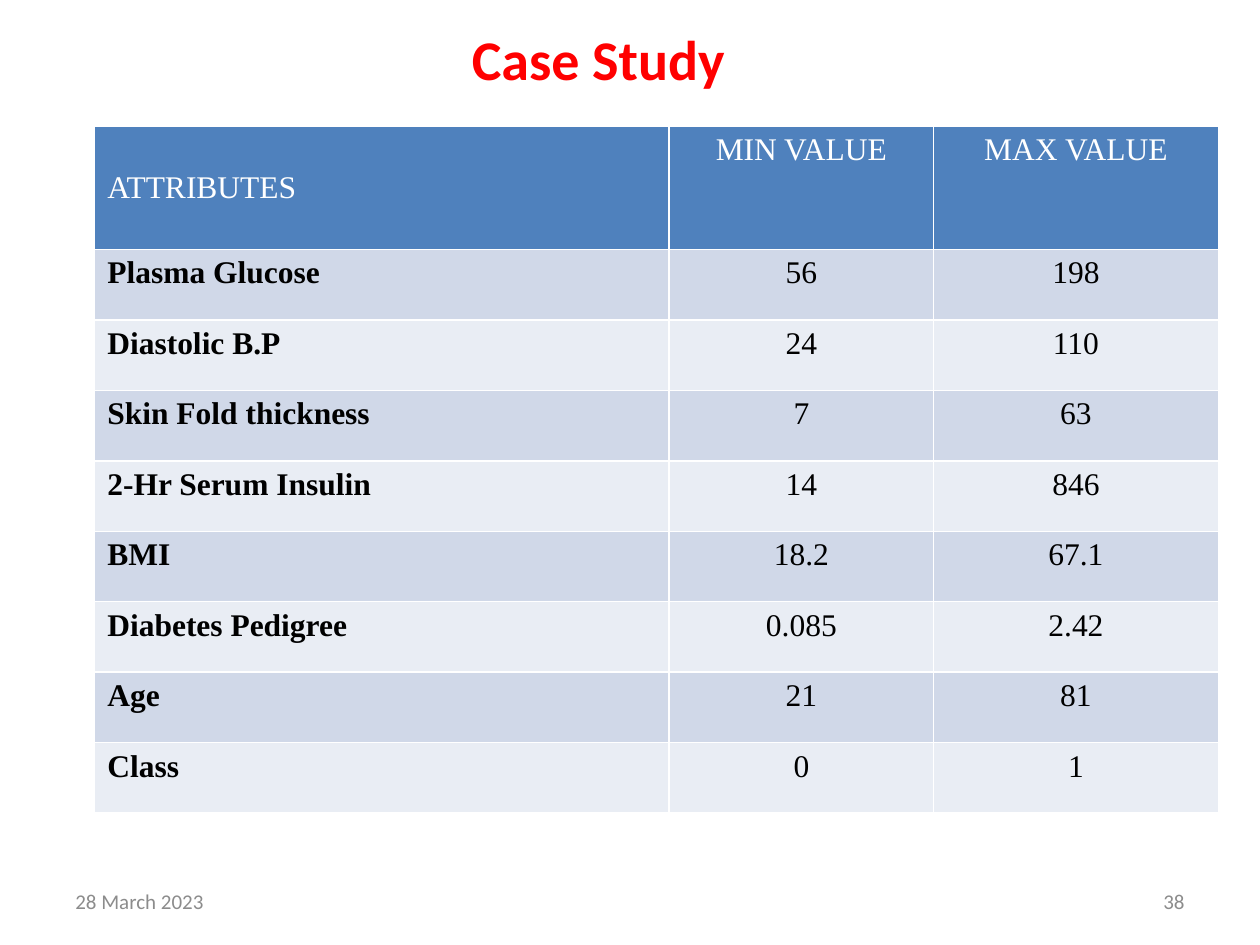
from pptx import Presentation
from pptx.dml.color import RGBColor
from pptx.enum.text import MSO_ANCHOR, PP_ALIGN
from pptx.util import Cm, Pt

LEFT, CENTER, RIGHT = PP_ALIGN.LEFT, PP_ALIGN.CENTER, PP_ALIGN.RIGHT
TOP, MIDDLE = MSO_ANCHOR.TOP, MSO_ANCHOR.MIDDLE

HEADER_FILL = "4F81BD"
BAND_FILLS = ["D0D8E8", "E9EDF4"]
ROWS = [
    ("ATTRIBUTES", "MIN VALUE", "MAX VALUE"),
    ("Plasma Glucose", "56", "198"),
    ("Diastolic B.P", "24", "110"),
    ("Skin Fold thickness", "7", "63"),
    ("2-Hr Serum Insulin", "14", "846"),
    ("BMI", "18.2", "67.1"),
    ("Diabetes Pedigree", "0.085", "2.42"),
    ("Age", "21", "81"),
    ("Class", "0", "1"),
]
COLUMN_WIDTHS = [11.58, 5.33, 5.74]
ROW_HEIGHTS = [2.49] + [1.42] * (len(ROWS) - 1)


def rgb(value):
    return RGBColor.from_string(value)


def write(frame, text, size=18, font="Times New Roman", color="000000", bold=False, align=LEFT):
    para = frame.paragraphs[0]
    para.alignment = align
    span = para.add_run()
    span.text = text
    span.font.size = Pt(size)
    span.font.name = font
    span.font.bold = bold
    span.font.color.rgb = rgb(color)


deck = Presentation()
deck.slide_width, deck.slide_height = Cm(25.4), Cm(19.05)
page = deck.slides.add_slide(deck.slide_layouts[6])

# Title, date and page number
footer = {"size": 12, "color": "8C8C8C"}
labels = [
    ("Case Study", (0, 0.43, 24.13, 1.47),
     {"size": 32, "color": "FF0000", "bold": True, "align": CENTER}),
    ("28 March 2023", (1.27, 17.65, 5.92, 1.02), footer),
    ("38", (18.21, 17.65, 5.92, 1.02), {**footer, "align": RIGHT}),
]
for text, bounds, style in labels:
    box = page.shapes.add_textbox(*(Cm(length) for length in bounds))
    box.text_frame.word_wrap = True
    box.text_frame.vertical_anchor = MIDDLE
    write(box.text_frame, text, font="Calibri", **style)

# Attribute ranges; the default table style supplies the white borders
table = page.shapes.add_table(
    len(ROWS), len(COLUMN_WIDTHS), Cm(1.91), Cm(2.54),
    Cm(sum(COLUMN_WIDTHS)), Cm(sum(ROW_HEIGHTS))).table
for column, width in zip(table.columns, COLUMN_WIDTHS):
    column.width = Cm(width)
for row, height in zip(table.rows, ROW_HEIGHTS):
    row.height = Cm(height)

for r, values in enumerate(ROWS):
    is_header = r == 0
    for c, text in enumerate(values):
        is_name = c == 0
        cell = table.cell(r, c)
        cell.fill.solid()
        cell.fill.fore_color.rgb = rgb(HEADER_FILL if is_header else BAND_FILLS[(r - 1) % 2])
        cell.vertical_anchor = MIDDLE if is_header and is_name else TOP
        write(cell.text_frame, text,
              color="FFFFFF" if is_header else "000000",
              bold=is_name and not is_header,
              align=LEFT if is_name else CENTER)

deck.save("out.pptx")
